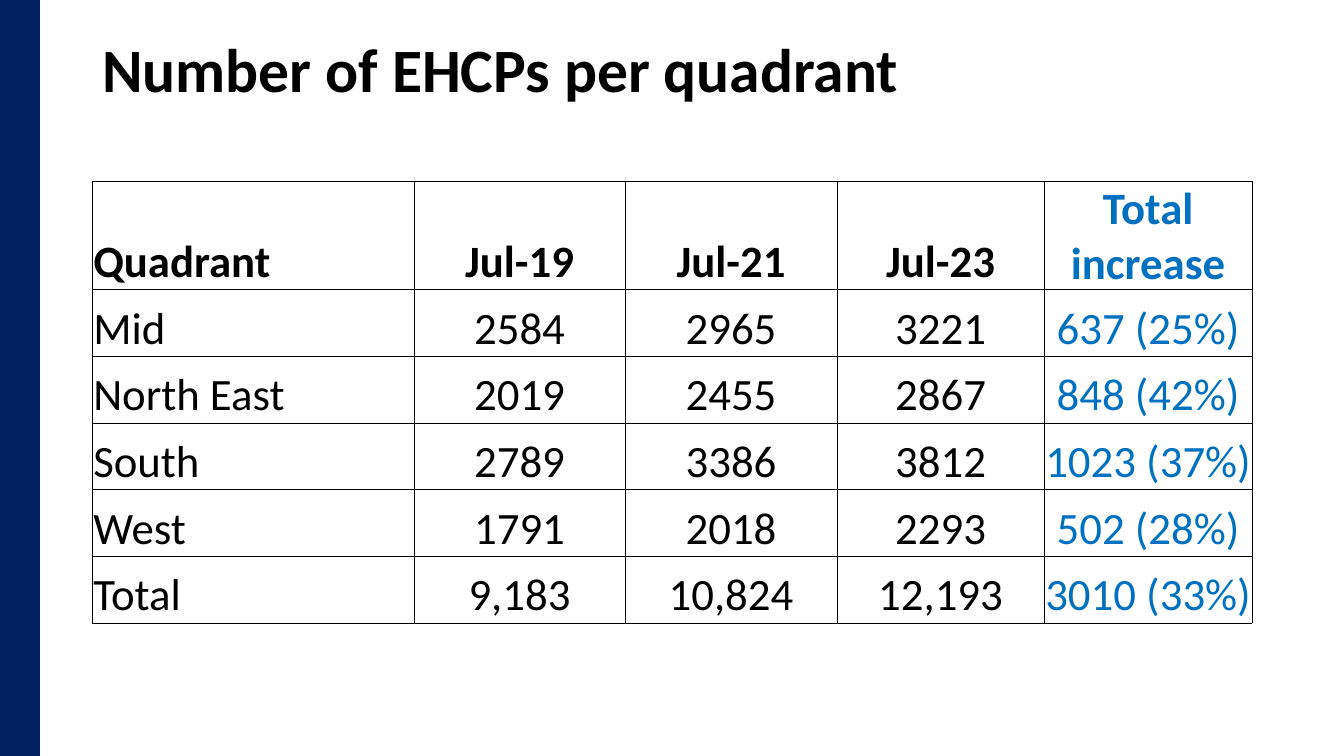
from lxml.etree import SubElement
from pptx import Presentation
from pptx.dml.color import RGBColor
from pptx.enum.shapes import MSO_SHAPE
from pptx.enum.text import MSO_ANCHOR, PP_ALIGN
from pptx.oxml.ns import qn
from pptx.util import Cm, Pt

NAVY = RGBColor(0x00, 0x20, 0x60)
BLUE = RGBColor(0x00, 0x70, 0xC0)
BLACK = RGBColor(0x00, 0x00, 0x00)
FONT = "Calibri"

COLUMN_WIDTHS = [8.1, 5.33, 5.33, 5.23, 5.23]
ROW_HEIGHT = 1.68
ROWS = [
    ["Quadrant", "Jul-19", "Jul-21", "Jul-23", "Total increase"],
    ["Mid", "2584", "2965", "3221", "637 (25%)"],
    ["North East", "2019", "2455", "2867", "848 (42%)"],
    ["South", "2789", "3386", "3812", "1023 (37%)"],
    ["West", "1791", "2018", "2293", "502 (28%)"],
    ["Total", "9,183", "10,824", "12,193", "3010 (33%)"],
]


def style_paragraph(paragraph, size, color, bold):
    paragraph.font.name = FONT
    paragraph.font.size = Pt(size)
    paragraph.font.bold = bold
    paragraph.font.color.rgb = color


def add_side_bar(slide, height):
    bar = slide.shapes.add_shape(MSO_SHAPE.RECTANGLE, 0, 0, Cm(1), height)
    bar.shadow.inherit = False
    bar.fill.solid()
    bar.fill.fore_color.rgb = NAVY
    bar.line.color.rgb = NAVY
    bar.line.width = Pt(1)


def add_title(slide, text):
    box = slide.shapes.add_textbox(Cm(2.33), 0, Cm(29.21), Cm(3.68))
    frame = box.text_frame
    frame.word_wrap = True
    frame.vertical_anchor = MSO_ANCHOR.MIDDLE
    paragraph = frame.paragraphs[0]
    paragraph.text = text
    paragraph.line_spacing = 0.9
    style_paragraph(paragraph, 44, BLACK, True)


def add_borders(cell):
    properties = cell._tc.get_or_add_tcPr()
    for position, side in enumerate(("lnL", "lnR", "lnT", "lnB")):
        line = SubElement(properties, qn(f"a:{side}"), w=str(Pt(0.5)))
        fill = SubElement(line, qn("a:solidFill"))
        SubElement(fill, qn("a:srgbClr"), val=str(BLACK))
        properties.insert(position, line)


def fill_cell(cell, text, color, bold, alignment):
    cell.text = text
    cell.fill.background()
    cell.vertical_anchor = MSO_ANCHOR.BOTTOM
    cell.margin_left = cell.margin_right = cell.margin_top = Cm(0.02)
    cell.margin_bottom = 0
    paragraph = cell.text_frame.paragraphs[0]
    paragraph.alignment = alignment
    style_paragraph(paragraph, 32, color, bold)
    add_borders(cell)


def add_quadrant_table(slide):
    table = slide.shapes.add_table(
        len(ROWS), len(COLUMN_WIDTHS), Cm(2.33), Cm(4.57),
        Cm(sum(COLUMN_WIDTHS)), Cm(ROW_HEIGHT * len(ROWS)),
    ).table
    table.horz_banding = False
    for column, width in zip(table.columns, COLUMN_WIDTHS):
        column.width = Cm(width)
    last = len(COLUMN_WIDTHS) - 1
    for row_index, values in enumerate(ROWS):
        table.rows[row_index].height = Cm(ROW_HEIGHT)
        for column_index, text in enumerate(values):
            fill_cell(
                table.cell(row_index, column_index), text,
                BLUE if column_index == last else BLACK,
                row_index == 0,
                PP_ALIGN.CENTER if column_index else PP_ALIGN.LEFT,
            )


def main():
    presentation = Presentation()
    presentation.slide_width = Cm(33.87)
    presentation.slide_height = Cm(19.05)
    slide = presentation.slides.add_slide(presentation.slide_layouts[6])
    add_title(slide, "Number of EHCPs per quadrant")
    add_quadrant_table(slide)
    add_side_bar(slide, presentation.slide_height)
    presentation.save("out.pptx")


if __name__ == "__main__":
    main()
